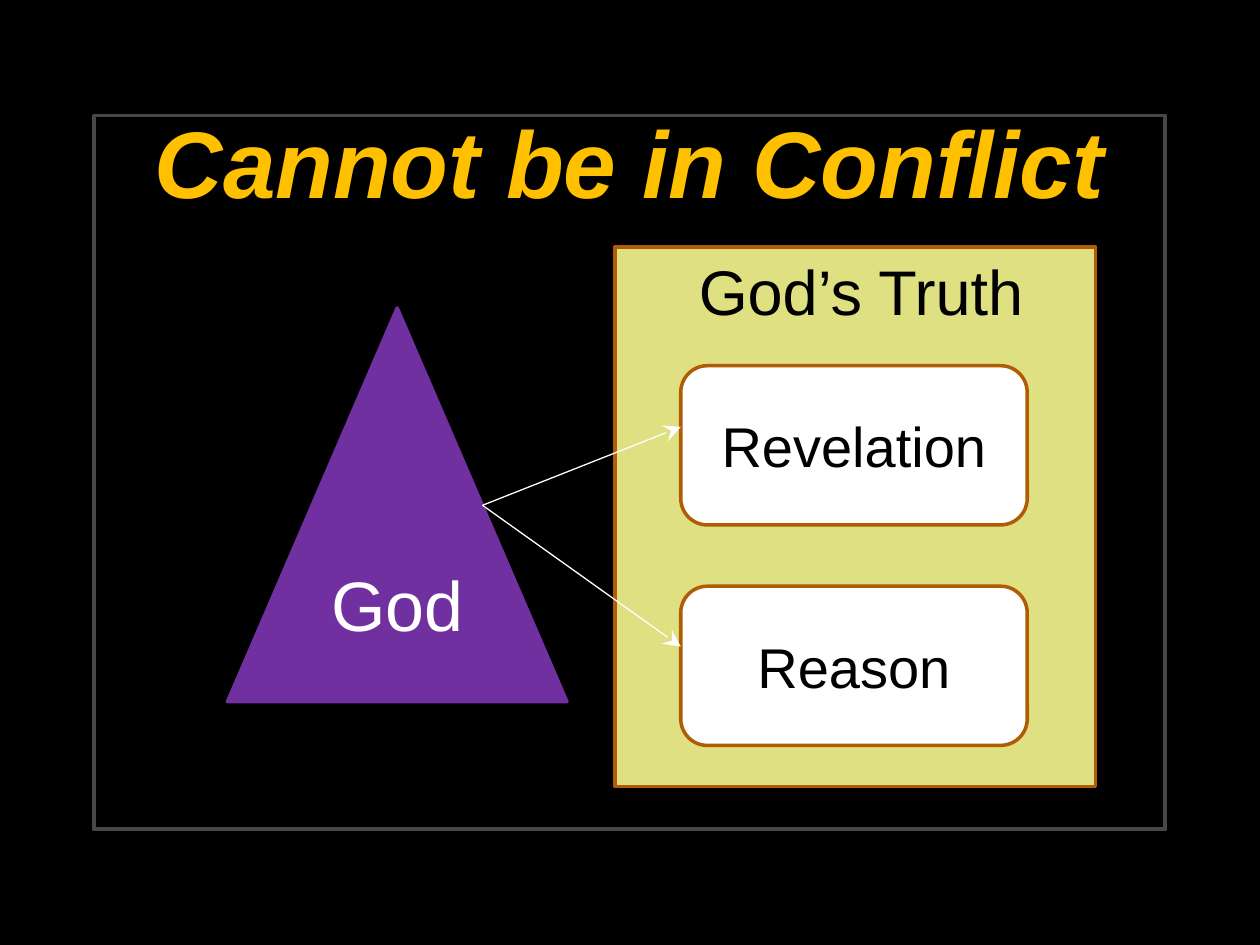
from dataclasses import dataclass

from lxml import etree
from pptx import Presentation
from pptx.dml.color import RGBColor
from pptx.enum import shapes, text
from pptx.oxml import ns
from pptx.util import Pt

FONT = "Arial"
BLACK, WHITE = "000000", "FFFFFF"
GOLD, PURPLE, OLIVE, BROWN, GRAY = "FFC000", "7030A0", "DEE082", "B05C05", "474747"
KIND = shapes.MSO_SHAPE


@dataclass
class Box:
    left: float
    top: float
    width: float
    height: float

    def lengths(self) -> list:
        return [Pt(value) for value in (self.left, self.top, self.width, self.height)]


@dataclass
class Label:
    words: str
    size: float
    color: str = BLACK
    emphasis: bool = False


def paint(color_format, color: str) -> None:
    """Apply a hex colour to a fill, or to a font's colour."""
    if hasattr(color_format, "solid"):
        color_format.solid()
        color_format = color_format.fore_color
    color_format.rgb = RGBColor.from_string(color)


def write(shape, label: Label) -> None:
    shape.text_frame.word_wrap = True
    paragraph = shape.text_frame.paragraphs[0]
    paragraph.alignment = text.PP_ALIGN.CENTER
    run = paragraph.add_run()
    run.text = label.words
    run.font.name = FONT
    run.font.size = Pt(label.size)
    run.font.bold = run.font.italic = label.emphasis
    paint(run.font.color, label.color)


def add_panel(slide, kind, box: Box, fill: str | None, line: str,
              label: Label | None = None, line_width: float = 2):
    shape = slide.shapes.add_shape(kind, *box.lengths())
    shape.shadow.inherit = False
    if fill:
        paint(shape.fill, fill)
    else:
        shape.fill.background()
    paint(shape.line.fill, line)
    shape.line.width = Pt(line_width)
    if label:
        write(shape, label)
    return shape


def add_text(slide, box: Box, label: Label, anchor=text.MSO_ANCHOR.TOP) -> None:
    shape = slide.shapes.add_textbox(*box.lengths())
    shape.text_frame.vertical_anchor = anchor
    write(shape, label)


def add_arrow(slide, start: tuple[float, float], end: tuple[float, float]) -> None:
    arrow = slide.shapes.add_connector(
        shapes.MSO_CONNECTOR.STRAIGHT, *[Pt(value) for value in (*start, *end)])
    paint(arrow.line.fill, WHITE)
    arrow.line.width = Pt(0.75)
    etree.SubElement(arrow.line._get_or_add_ln(), ns.qn("a:tailEnd"),
                     type="stealth", w="lg", len="lg")
    etree.SubElement(arrow._element.spPr, ns.qn("a:effectLst"))


def main() -> None:
    presentation = Presentation()
    presentation.slide_width, presentation.slide_height = Pt(720), Pt(540)
    slide = presentation.slides.add_slide(presentation.slide_layouts[6])
    paint(slide.background.fill, BLACK)

    add_panel(slide, KIND.RECTANGLE, Box(54, 66, 612, 408), None, GRAY, line_width=2.25)
    add_panel(slide, KIND.RECTANGLE, Box(351.5, 141, 274.5, 308.5), OLIVE, BROWN)
    add_panel(slide, KIND.ISOSCELES_TRIANGLE, Box(130, 176, 194, 225), PURPLE, PURPLE,
              Label("God", 40, WHITE))

    source_left, source_width, source_height = 389, 198, 91
    for words, top in (("Revelation", 209), ("Reason", 335)):
        add_panel(slide, KIND.ROUNDED_RECTANGLE,
                  Box(source_left, top, source_width, source_height),
                  WHITE, BROWN, Label(words, 32))
    for arrow_end in (244, 369.5):
        add_arrow(slide, (275.75, 288.75), (source_left, arrow_end))

    add_text(slide, Box(390, 141, 204, 51), Label("God’s Truth", 36))
    add_text(slide, Box(54, 48, 612, 88), Label("Cannot be in Conflict", 54, GOLD, True),
             text.MSO_ANCHOR.MIDDLE)
    presentation.save("out.pptx")


if __name__ == "__main__":
    main()
